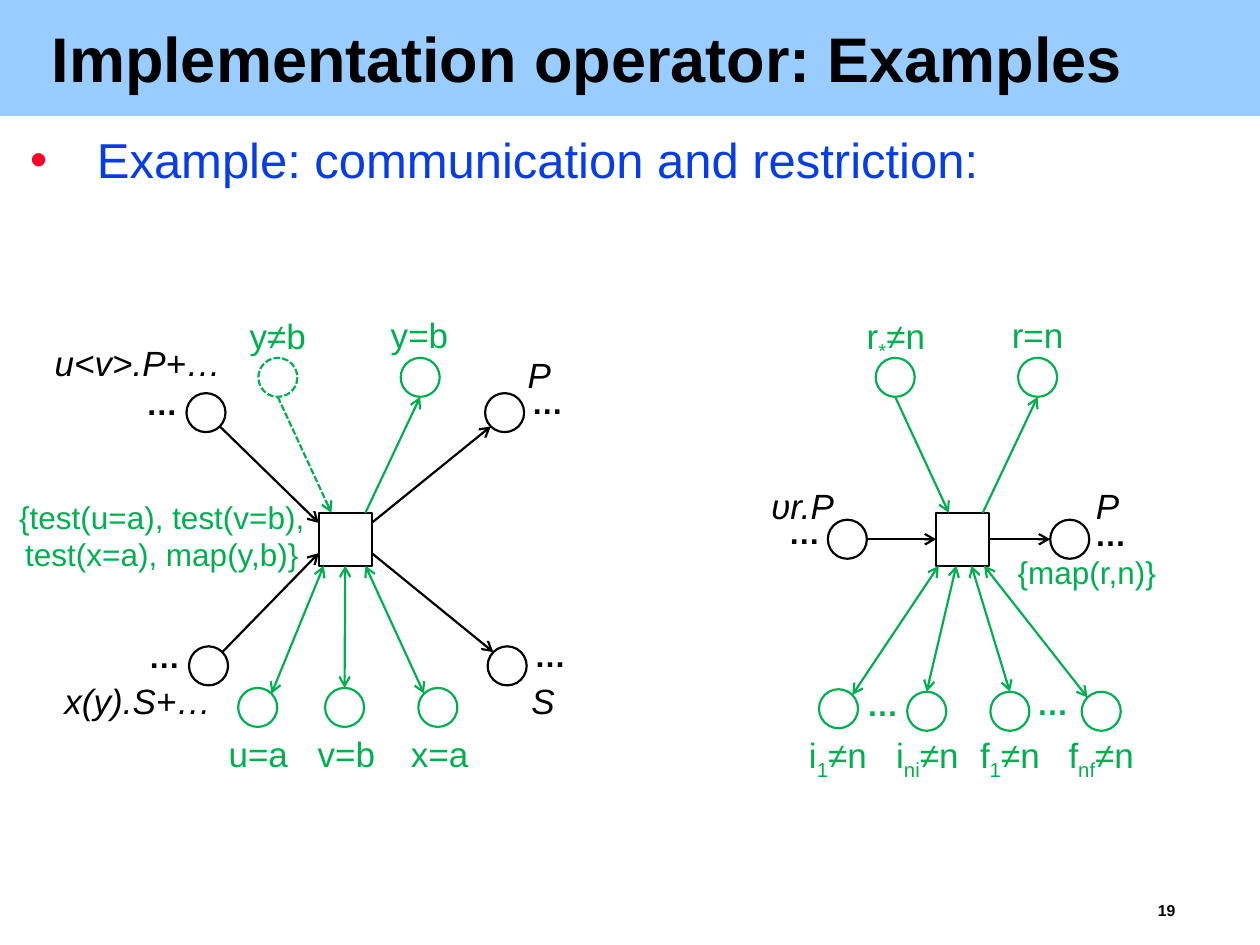
from dataclasses import dataclass
from enum import Enum
from math import cos, radians, sin
from typing import NamedTuple

from lxml.etree import SubElement
from pptx import Presentation
from pptx.dml.color import RGBColor as RGB
from pptx.enum.dml import MSO_LINE as Dash
from pptx.enum.shapes import MSO_CONNECTOR as Conn, MSO_SHAPE as Kind
from pptx.enum.text import MSO_ANCHOR as Anchor, PP_ALIGN as Align
from pptx.oxml.ns import qn
from pptx.util import Inches, Pt

WIDE, HIGH = Inches(10), Inches(7.5)
COL, ROW = WIDE / 100, HIGH / 75  # grid of 100 columns and 75 rows
RADIUS, HALF = 1.55, 2.1  # of a place circle, of a transition box


@dataclass(frozen=True)
class Theme:
    font: str = "Arial"
    ink: str = "000000"
    green: str = "00B050"
    band: str = "99CCFF"
    blue: str = "063DE8"
    red: str = "FC0128"
    head: int = 36
    body: int = 28
    name: int = 20
    note: int = 18
    page: int = 9
    line: float = 1.25


T = Theme()


class Flow(Enum):
    """Arrowheads of a link that runs from its circle to its box."""
    IN = ("tailEnd",)
    OUT = ("headEnd",)
    BOTH = ("headEnd", "tailEnd")


class Spot(NamedTuple):
    """A circle's centre, the angle its link leaves at, and where it meets the box."""
    x: float
    y: float
    angle: int
    dx: float
    dy: float
    flow: Flow
    color: str = T.green
    dash: bool = False


class Net(NamedTuple):
    x: float
    y: float
    spots: list[Spot]


class Label(NamedTuple):
    """Text at left, top, width; the parts between bars are subscripts."""
    text: str
    x: float
    y: float
    w: float


class Style(NamedTuple):
    size: int
    color: str
    high: float
    form: dict


NETS = [
    Net(27.4, 42.8, [
        Spot(16.35, 32.75, 45, -HALF, -1.3, Flow.IN, T.ink),
        Spot(16.55, 52.85, -45, -HALF, 1.1, Flow.IN, T.ink),
        Spot(40.05, 32.75, 135, HALF, -1.3, Flow.OUT, T.ink),
        Spot(40.25, 52.85, 225, HALF, 1.1, Flow.OUT, T.ink),
        Spot(20.45, 56.15, -45, -1.7, HALF, Flow.BOTH),
        Spot(27.35, 56.15, -90, 0, HALF, Flow.BOTH),
        Spot(34.75, 56.15, 225, 1.6, HALF, Flow.BOTH),
        Spot(22.05, 29.95, 90, -1.1, -HALF, Flow.IN, dash=True),
        Spot(33.35, 29.95, 90, 1.6, -HALF, Flow.OUT),
    ]),
    Net(76.4, 42.8, [
        Spot(67.25, 42.8, 0, -HALF, 0, Flow.IN, T.ink),
        Spot(84.9, 42.8, 180, HALF, 0, Flow.OUT, T.ink),
        Spot(66.55, 56.25, -45, -1.9, HALF, Flow.BOTH),
        Spot(73.55, 56.45, -90, -0.5, HALF, Flow.BOTH),
        Spot(80.15, 56.45, -90, 0.7, HALF, Flow.BOTH),
        Spot(87.4, 56.45, 225, 1.7, HALF, Flow.BOTH),
        Spot(71.05, 29.95, 90, -1.1, -HALF, Flow.IN),
        Spot(82.35, 29.95, 90, 1.6, -HALF, Flow.OUT),
    ]),
]

MID = {"align": Align.CENTER}
LABELS = [
    (Style(T.name, T.ink, 4.4, MID | {"italic": True, "inset": (0.1, 0.05), "wrap": True}), [
        Label("P", 39.4, 27.6, 6.8), Label("u<v>.P+…", 1.5, 26.6, 18.9),
        Label("S", 39.8, 53.4, 6.6), Label("x(y).S+…", 1.5, 53.4, 18.9),
        Label("P", 84.5, 38, 6.8), Label("υr.P", 59, 38, 9.4)]),
    (Style(T.note, T.ink, 3, MID | {"bold": True}), [
        Label("…", x, y, 2.5) for x, y in
        [(11.6, 30.5), (42.2, 30.4), (11.8, 50.6), (42.4, 50.5), (62.6, 40.7), (86.9, 40.9)]]),
    (Style(T.note, T.green, 3, MID | {"bold": True}), [
        Label("…", 68.8, 54.4, 2.5), Label("…", 82.3, 54.3, 2.5)]),
    (Style(T.note, T.green, 3, MID), [
        Label("{test(u=a), test(v=b),\ntest(x=a), map(y,b)}", 0.4, 39.5, 24.9),
        Label("{map(r,n)}", 80.7, 43.9, 11.1)]),
    (Style(T.name, T.green, 3.4, MID), [
        Label("y≠b", 19.8, 25, 4.5), Label("y=b", 31, 24.9, 4.6),
        Label("u=a", 18.1, 58.1, 4.8), Label("v=b", 25.2, 58.1, 4.6),
        Label("x=a", 32.6, 58.1, 4.6), Label("r|*|≠n", 68.7, 25, 4.8),
        Label("r=n", 80.3, 24.9, 4.1), Label("i|1|≠n", 64.1, 58.2, 4.8),
        Label("i|ni|≠n", 71, 58.2, 5.2), Label("f|1|≠n", 77.7, 58.2, 4.9),
        Label("f|nf|≠n", 84.7, 58.2, 5.4)]),
]


def cells(x: float, y: float, w: float, h: float) -> list[int]:
    return [round(v) for v in (x * COL, y * ROW, w * COL, h * ROW)]


def write(shape, text: str, *, size: int, color: str = T.ink, bold=False, italic=False,
          align=Align.LEFT, anchor=Anchor.TOP, inset=(0, 0), wrap=False, space=None):
    frame = shape.text_frame
    frame.word_wrap, frame.vertical_anchor = wrap, anchor
    frame.margin_left = frame.margin_right = Inches(inset[0])
    frame.margin_top = frame.margin_bottom = Inches(inset[1])
    for row, line in enumerate(text.split("\n")):
        para = frame.add_paragraph() if row else frame.paragraphs[0]
        para.alignment, para.line_spacing = align, space
        for place, part in enumerate(line.split("|")):
            run = para.add_run()
            run.text, font = part, run.font
            font.name, font.size, font.bold, font.italic = T.font, Pt(size), bold, italic
            font.color.rgb = RGB.from_string(color)
            if place % 2:
                run._r.get_or_add_rPr().set("baseline", "-25000")
    return frame


def stroke(line, color: str, dash: bool = False) -> None:
    line.color.rgb, line.width = RGB.from_string(color), Pt(T.line)
    if dash:
        line.dash_style = Dash.SQUARE_DOT


def outline(shapes, kind: Kind, x: float, y: float, half: float, color: str, dash=False) -> None:
    """Draw an unfilled shape around its centre."""
    shape = shapes.add_shape(kind, *cells(x - half, y - half, 2 * half, 2 * half))
    shape.shadow.inherit = False
    shape.fill.background()
    stroke(shape.line, color, dash)


def link(shapes, net: Net, spot: Spot) -> None:
    turn = radians(spot.angle)
    ends = cells(spot.x + RADIUS * cos(turn), spot.y + RADIUS * sin(turn),
                 net.x + spot.dx, net.y + spot.dy)
    wire = shapes.add_connector(Conn.STRAIGHT, *ends)
    stroke(wire.line, spot.color, spot.dash)
    for end in spot.flow.value:
        SubElement(wire.line._get_or_add_ln(), qn("a:" + end), type="arrow")
    SubElement(wire._element.spPr, qn("a:effectLst"))


def bullet(para, color: str, indent: float) -> None:
    props = para._p.get_or_add_pPr()
    props.set("marL", str(Inches(indent)))
    props.set("indent", str(-Inches(indent)))
    SubElement(SubElement(props, qn("a:buClr")), qn("a:srgbClr"), val=color)
    SubElement(props, qn("a:buFont"), typeface=T.font)
    SubElement(props, qn("a:buChar"), char="•")


def main() -> None:
    deck = Presentation()
    deck.slide_width, deck.slide_height = WIDE, HIGH
    slide = deck.slides.add_slide(deck.slide_layouts[5])
    shapes, title = slide.shapes, slide.shapes.title

    band = shapes.add_shape(Kind.RECTANGLE, *cells(0, 0, 100, 9.2))
    band.shadow.inherit = False
    band.fill.solid()
    band.fill.fore_color.rgb = RGB.from_string(T.band)
    band.line.fill.background()
    title._element.addprevious(band._element)

    title.left, title.top, title.width, title.height = cells(3.5, 2.1, 92.1, 5.7)
    write(title, "Implementation operator: Examples", size=T.head, bold=True,
          anchor=Anchor.MIDDLE, inset=(0.06, 0.02), wrap=True, space=0.87)
    body = write(shapes.add_textbox(*cells(1.6, 9.9, 97.3, 61.4)),
                 "Example: communication and restriction:", size=T.body, color=T.blue,
                 inset=(0.08, 0.04), wrap=True)
    body.paragraphs[0].space_before = Pt(5)
    bullet(body.paragraphs[0], T.red, 0.53)
    write(shapes.add_textbox(*cells(91.3, 71.4, 2.6, 1.9)), "19", size=T.page, bold=True,
          inset=(0.06, 0.02), space=0.97)

    for net in NETS:
        outline(shapes, Kind.RECTANGLE, net.x, net.y, HALF, T.ink)
        for spot in net.spots:
            outline(shapes, Kind.OVAL, spot.x, spot.y, RADIUS, spot.color, spot.dash)
            link(shapes, net, spot)
    for style, labels in LABELS:
        for text, x, y, w in labels:
            high = style.high * (1 + text.count("\n"))
            write(shapes.add_textbox(*cells(x, y, w, high)), text,
                  size=style.size, color=style.color, **style.form)
    deck.save("out.pptx")


if __name__ == "__main__":
    main()
